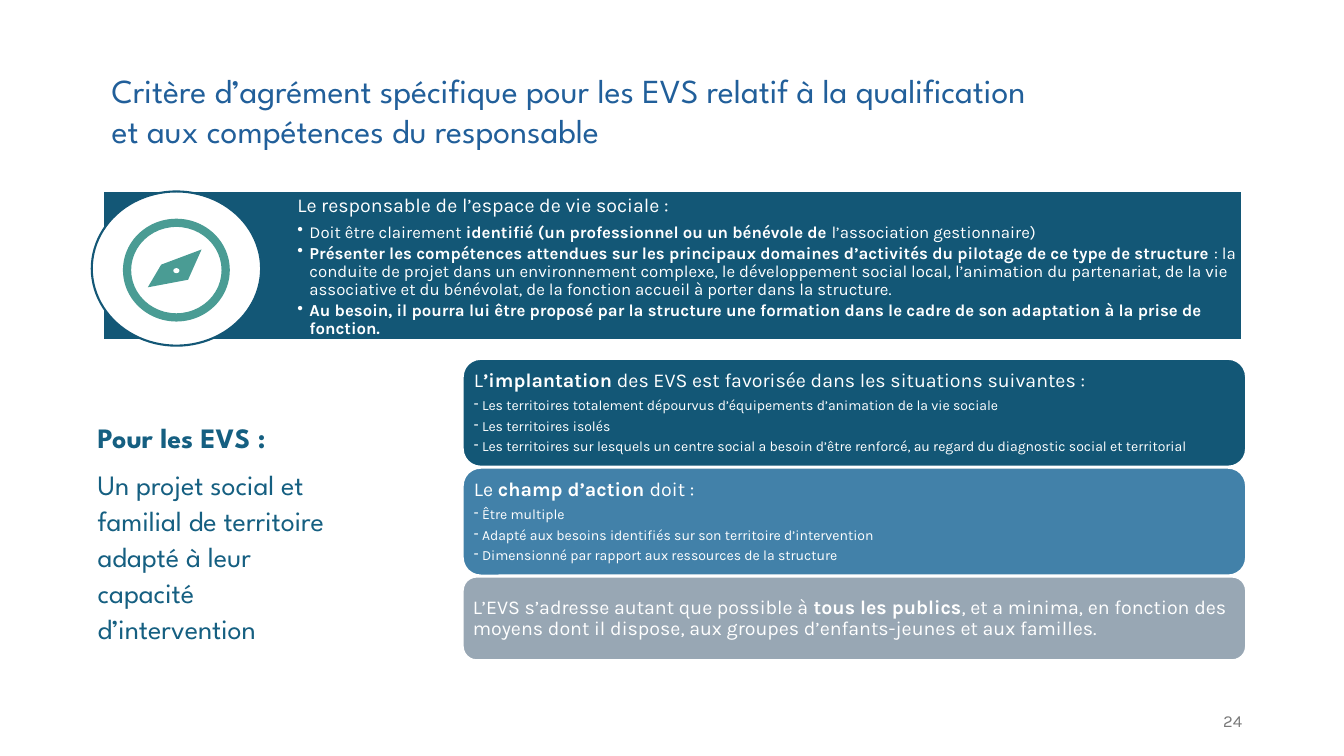
from lxml.etree import SubElement
from pptx import Presentation
from pptx.dml.color import RGBColor
from pptx.enum.shapes import MSO_SHAPE
from pptx.enum.text import MSO_ANCHOR, PP_ALIGN
from pptx.oxml.ns import qn
from pptx.util import Inches, Pt

THEME = {
    "white": RGBColor.from_string("FFFFFF"),
    "navy": RGBColor.from_string("135776"),
    "blue": RGBColor.from_string("4281A9"),
    "grey": RGBColor.from_string("98A7B4"),
    "teal": RGBColor.from_string("4A9C94"),
    "title": RGBColor.from_string("215F9A"),
    "side": RGBColor.from_string("155F81"),
    "page": RGBColor.from_string("797979"),
    "head": "League Spartan", "body": "Karla",
    "big": 24, "mid": 20, "lead": 14, "text": 12, "small": 10,
    "edge": 1.5,
}

deck = Presentation()
deck.slide_width, deck.slide_height = Inches(13.33), Inches(7.5)
slide = deck.slides.add_slide(deck.slide_layouts[6])
shapes = slide.shapes

# The grid: 100 columns by 100 rows over the slide
COL, ROW = deck.slide_width / 100, deck.slide_height / 100


def place(kind, x, y, w, h, fill=None, line=None):
    """Put a shape on the grid, or a text box if kind is None."""
    spot = [int(n) for n in (x * COL, y * ROW, w * COL, h * ROW)]
    if kind is None:
        return shapes.add_textbox(*spot)
    shape = shapes.add_shape(kind, *spot)
    shape.shadow.inherit = False
    shape.fill.solid()
    shape.fill.fore_color.rgb = THEME[fill]
    if line:
        shape.line.color.rgb = THEME[line]
        shape.line.width = Pt(THEME["edge"])
    else:
        shape.line.fill.background()
    return shape


def write(shape, rows, font="body", color="white", gap=1.0,
          anchor=MSO_ANCHOR.TOP, align=PP_ALIGN.LEFT, pads=None):
    """Fill a shape with rows of (size, space after, bullet, indent, runs)."""
    frame = shape.text_frame
    frame.word_wrap = True
    frame.vertical_anchor = anchor
    if pads:
        (frame.margin_left, frame.margin_top,
         frame.margin_right, frame.margin_bottom) = [Inches(n) for n in pads]
    for i, (size, after, mark, dent, runs) in enumerate(rows):
        para = frame.add_paragraph() if i else frame.paragraphs[0]
        if mark:
            props = para._p.get_or_add_pPr()
            props.set("marL", str(Inches(dent)))
            props.set("indent", str(-Inches(dent)))
            SubElement(props, qn("a:buChar")).set("char", mark)
        para.alignment = align
        para.line_spacing = gap
        para.space_after = Pt(after)
        for text, bold in runs:
            run = para.add_run()
            run.text = text
            run.font.name = THEME[font]
            run.font.size = Pt(THEME[size])
            run.font.bold = bold
            run.font.color.rgb = THEME[color]


# Title
title = ["Critère d’agrément spécifique pour les EVS relatif à la qualification",
         "et aux compétences du responsable"]
write(place(None, 7.58, 8.53, 75, 12),
      [("big", 0, None, 0, [(t, False)]) for t in title], "head", "title")

# Banner on the person in charge
points = [
    [("Doit être clairement ", False),
     ("identifié (un professionnel ou un bénévole de ", True),
     ("l’association gestionnaire)", False)],
    [("Présenter les compétences attendues sur les principaux domaines "
      "d’activités du pilotage de ce type de structure ", True),
     (": la conduite de projet dans un environnement complexe, le "
      "développement social local, l’animation du partenariat, de la vie "
      "associative et du bénévolat, de la fonction accueil à porter dans "
      "la structure.", False)],
    [("Au besoin, il pourra lui être proposé par la structure une formation "
      "dans le cadre de son adaptation à la prise de fonction.", True)],
]
banner = place(MSO_SHAPE.RECTANGLE, 7.65, 25.33, 84.77, 19.6, "navy", "white")
write(banner,
      [("lead", 5, None, 0,
        [("Le responsable de l’espace de vie sociale :", False)])]
      + [("text", 2.1, "•", 0.12, runs) for runs in points],
      gap=0.9, pads=(1.93, 0.04, 0.04, 0.04))

# Compass: disc, ring, needle, pivot
place(MSO_SHAPE.OVAL, 6.83, 25.33, 12.6, 20.4, "white", "navy")
ring = place(MSO_SHAPE.DONUT, 9.15, 28.93, 7.95, 13.6, "teal")
ring.adjustments[0] = 0.08
tips = [(11.48, 38.27), (13.8, 36.8), (14.7, 33.2), (12.45, 34.8)]
pen = shapes.build_freeform(*tips[0], scale=(COL, ROW))
pen.add_line_segments(tips[1:], close=True)
needle = pen.convert_to_shape()
needle.shadow.inherit = False
needle.fill.solid()
needle.fill.fore_color.rgb = THEME["teal"]
needle.line.fill.background()
place(MSO_SHAPE.OVAL, 12.9, 35.47, 0.45, 0.67, "white")

# Cards, stacked at an even step
cards = [
    ("navy", 14.27,
     [("L", False), ("’implantation", True),
      (" des EVS est favorisée dans les situations suivantes :", False)],
     ["Les territoires totalement dépourvus d’équipements d’animation de la "
      "vie sociale",
      "Les territoires isolés",
      "Les territoires sur lesquels un centre social a besoin d’être renforcé, "
      "au regard du diagnostic social et territorial"]),
    ("blue", 14.27,
     [("Le ", False), ("champ d’action ", True), ("doit :", False)],
     ["Être multiple",
      "Adapté aux besoins identifiés sur son territoire d’intervention",
      "Dimensionné par rapport aux ressources de la structure"]),
    ("grey", 11.07,
     [("L’EVS s’adresse autant que possible à ", False),
      ("tous les publics", True),
      (", et a minima, en fonction des moyens dont il dispose, aux groupes "
       "d’enfants-jeunes et aux familles.", False)],
     []),
]
for i, (fill, tall, lead, items) in enumerate(cards):
    card = place(MSO_SHAPE.ROUNDED_RECTANGLE, 34.43, 47.47 + i * 14.4,
                 58.29, tall, fill, "white")
    write(card,
          [("lead", 5, None, 0, lead)]
          + [("small", 3.8, "-", 0.08, [(t, False)]) for t in items],
          gap=0.9, anchor=MSO_ANCHOR.MIDDLE, pads=[0.06] * 4)

# Side note
note = [("Pour les EVS :", True),
        ("Un projet social et familial de territoire adapté à leur capacité "
         "d’intervention", False)]
write(place(None, 6.53, 54.67, 19.05, 31.33),
      [("mid", 8, None, 0, [run]) for run in note], "head", "side", gap=1.07)

# Page number
write(place(None, 70.67, 92.67, 22.5, 5.33),
      [("text", 0, None, 0, [("24", False)])], color="page",
      anchor=MSO_ANCHOR.MIDDLE, align=PP_ALIGN.RIGHT)

deck.save("out.pptx")
